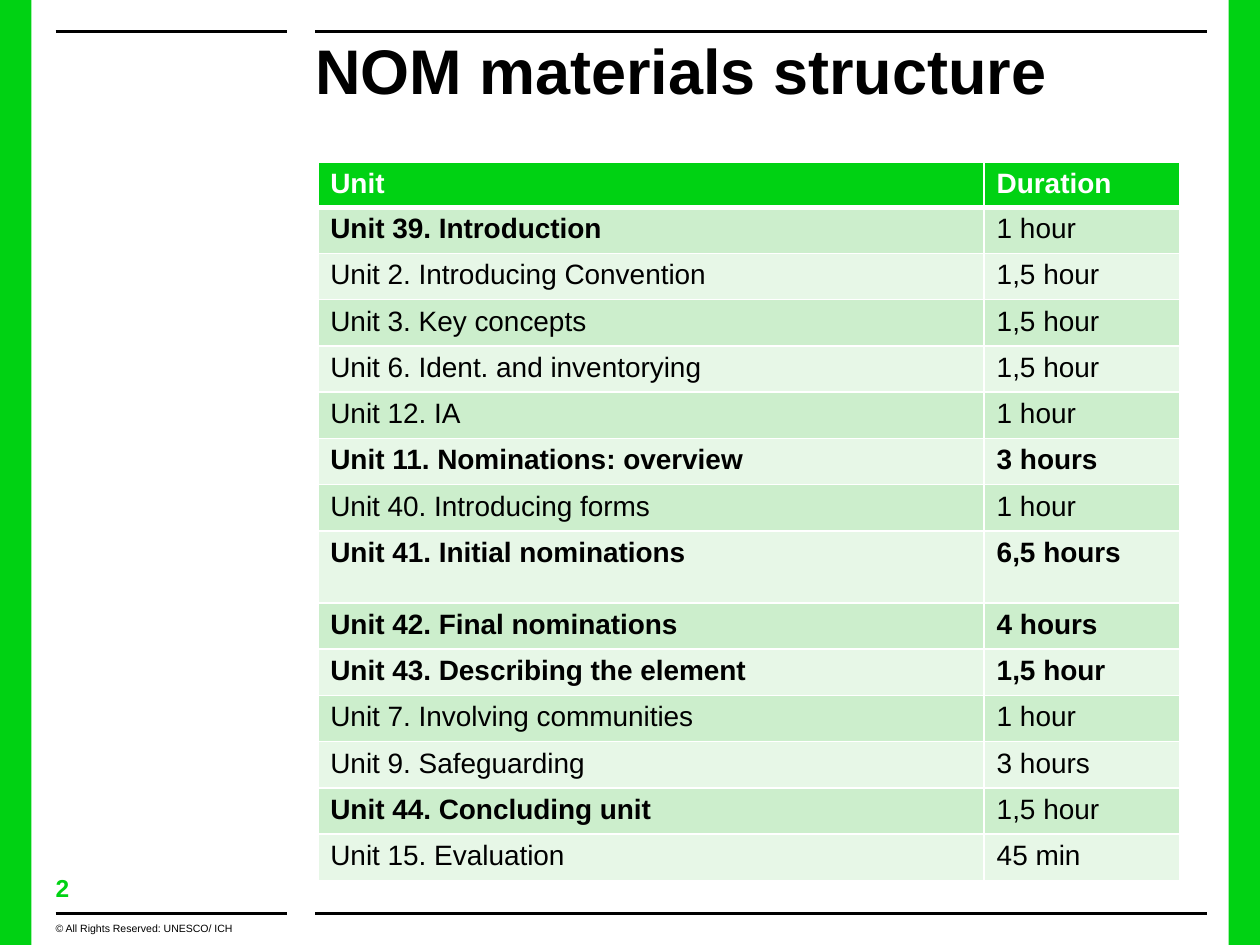
"""Build the NOM materials structure slide with its table of units and durations."""
from lxml import etree
from pptx import Presentation
from pptx.dml.color import RGBColor
from pptx.enum.shapes import MSO_CONNECTOR, MSO_SHAPE
from pptx.oxml.ns import qn
from pptx.util import Pt

STRAIGHT = MSO_CONNECTOR.STRAIGHT
RECTANGLE = MSO_SHAPE.RECTANGLE

FONT = "Arial"
GREEN, BLACK, WHITE = "00D213", "000000", "FFFFFF"
BANDS = ["CCEECC", "E7F7E7"]

SLIDE_WIDTH, SLIDE_HEIGHT = 720, 540
BAR_WIDTH = 18
RULE_SPANS = [(31.75, 164), (180, 690)]
RULE_TOPS = [18, 522]

TEXTS = [
    ("2", (31.75, 499, 82, 17.3), 14, GREEN, True),
    ("© All Rights Reserved: UNESCO/ ICH", (31.75, 527, 132, 13), 6, BLACK, False),
    ("NOM materials structure", (180, 18, 530, 126), 36, BLACK, True),
]

HEADER = ("Unit", "Duration")
UNITS = [
    ("Unit 39. Introduction", "1 hour", True, False),
    ("Unit 2. Introducing Convention", "1,5 hour", False, False),
    ("Unit 3. Key concepts", "1,5 hour", False, False),
    ("Unit 6. Ident. and inventorying", "1,5 hour", False, False),
    ("Unit 12. IA", "1 hour", False, False),
    ("Unit 11. Nominations: overview", "3 hours", True, True),
    ("Unit 40. Introducing forms", "1 hour", False, False),
    ("Unit 41. Initial nominations", "6,5 hours", True, True),
    ("Unit 42. Final nominations", "4 hours", True, True),
    ("Unit 43. Describing the element", "1,5 hour", True, True),
    ("Unit 7. Involving communities", "1 hour", False, False),
    ("Unit 9. Safeguarding", "3 hours", False, False),
    ("Unit 44. Concluding unit", "1,5 hour", True, False),
    ("Unit 15. Evaluation", "45 min", False, False),
]
TABLE_LEFT, TABLE_TOP = 181.6, 92.8
COLUMN_WIDTHS = [380.8, 111.6]
HEADER_HEIGHT, ROW_HEIGHT, TALL_ROW_HEIGHT = 25.6, 26.43, 41.2
TALL_UNIT = "Unit 41. Initial nominations"


def color(value):
    return RGBColor.from_string(value)


def style(paragraph, size, font_color, bold):
    for run in paragraph.runs:
        run.font.name = FONT
        run.font.size = Pt(size)
        run.font.bold = bold
        run.font.color.rgb = color(font_color)


def add_bar(slide, left):
    shape = slide.shapes.add_shape(RECTANGLE, Pt(left), 0, Pt(BAR_WIDTH), Pt(SLIDE_HEIGHT))
    shape.shadow.inherit = False
    shape.fill.solid()
    shape.fill.fore_color.rgb = color(GREEN)
    shape.line.fill.background()


def add_rule(slide, start, end, top):
    connector = slide.shapes.add_connector(STRAIGHT, Pt(start), Pt(top), Pt(end), Pt(top))
    connector.line.color.rgb = color(BLACK)
    connector.line.width = Pt(2)
    etree.SubElement(connector._element.spPr, qn("a:effectLst"))


def add_text(slide, text, box, size, font_color, bold):
    text_frame = slide.shapes.add_textbox(*map(Pt, box)).text_frame
    text_frame.margin_left = text_frame.margin_right = 0
    text_frame.margin_top = text_frame.margin_bottom = 0
    text_frame.word_wrap = True
    text_frame.text = text
    style(text_frame.paragraphs[0], size, font_color, bold)


def set_borders(cell, widths):
    properties = cell._tc.get_or_add_tcPr()
    for index, (side, width) in enumerate(zip("LRTB", widths)):
        line = etree.Element(qn(f"a:ln{side}"), w=str(Pt(width)))
        fill = etree.SubElement(line, qn("a:solidFill"))
        etree.SubElement(fill, qn("a:srgbClr"), val=WHITE)
        properties.insert(index, line)


def fill_cell(cell, text, font_color, bold, background, border_widths):
    cell.text = text
    style(cell.text_frame.paragraphs[0], 16, font_color, bold)
    cell.fill.solid()
    cell.fill.fore_color.rgb = color(background)
    set_borders(cell, border_widths)


def add_units_table(slide):
    heights = [HEADER_HEIGHT] + [
        TALL_ROW_HEIGHT if unit[0] == TALL_UNIT else ROW_HEIGHT for unit in UNITS
    ]
    table = slide.shapes.add_table(
        len(heights), len(COLUMN_WIDTHS), Pt(TABLE_LEFT), Pt(TABLE_TOP),
        Pt(sum(COLUMN_WIDTHS)), Pt(sum(heights)),
    ).table
    for column, width in zip(table.columns, COLUMN_WIDTHS):
        column.width = Pt(width)
    for row, height in zip(table.rows, heights):
        row.height = Pt(height)
    for column, text in enumerate(HEADER):
        fill_cell(table.cell(0, column), text, WHITE, True, GREEN, (1, 1, 1, 3))
    for row, (unit, duration, unit_bold, duration_bold) in enumerate(UNITS, 1):
        background = BANDS[(row - 1) % 2]
        borders = (1, 1, 3 if row == 1 else 1, 1)
        fill_cell(table.cell(row, 0), unit, BLACK, unit_bold, background, borders)
        fill_cell(table.cell(row, 1), duration, BLACK, duration_bold, background, borders)


def main():
    presentation = Presentation()
    presentation.slide_width = Pt(SLIDE_WIDTH)
    presentation.slide_height = Pt(SLIDE_HEIGHT)
    slide = presentation.slides.add_slide(presentation.slide_layouts[6])
    for left in (0, SLIDE_WIDTH - BAR_WIDTH):
        add_bar(slide, left)
    for top in RULE_TOPS:
        for start, end in RULE_SPANS:
            add_rule(slide, start, end, top)
    add_units_table(slide)
    for text in TEXTS:
        add_text(slide, *text)
    presentation.save("out.pptx")


if __name__ == "__main__":
    main()
